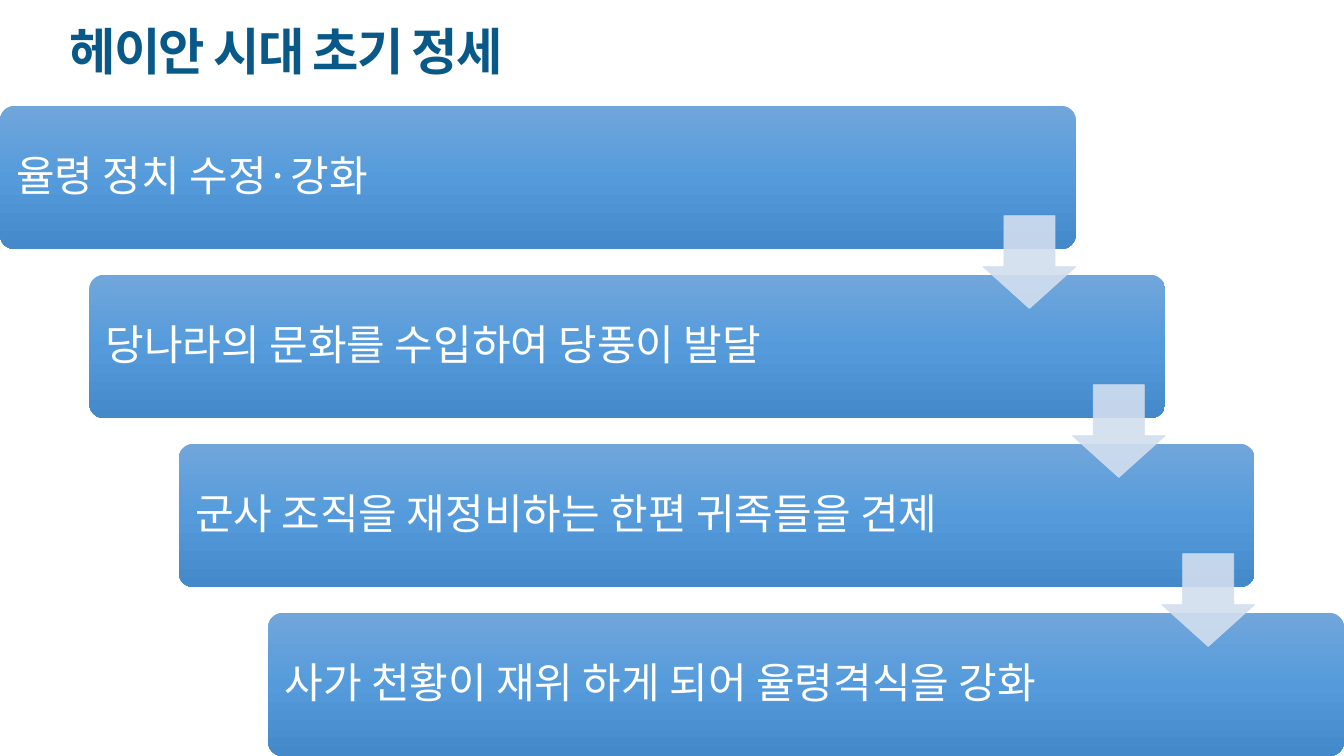
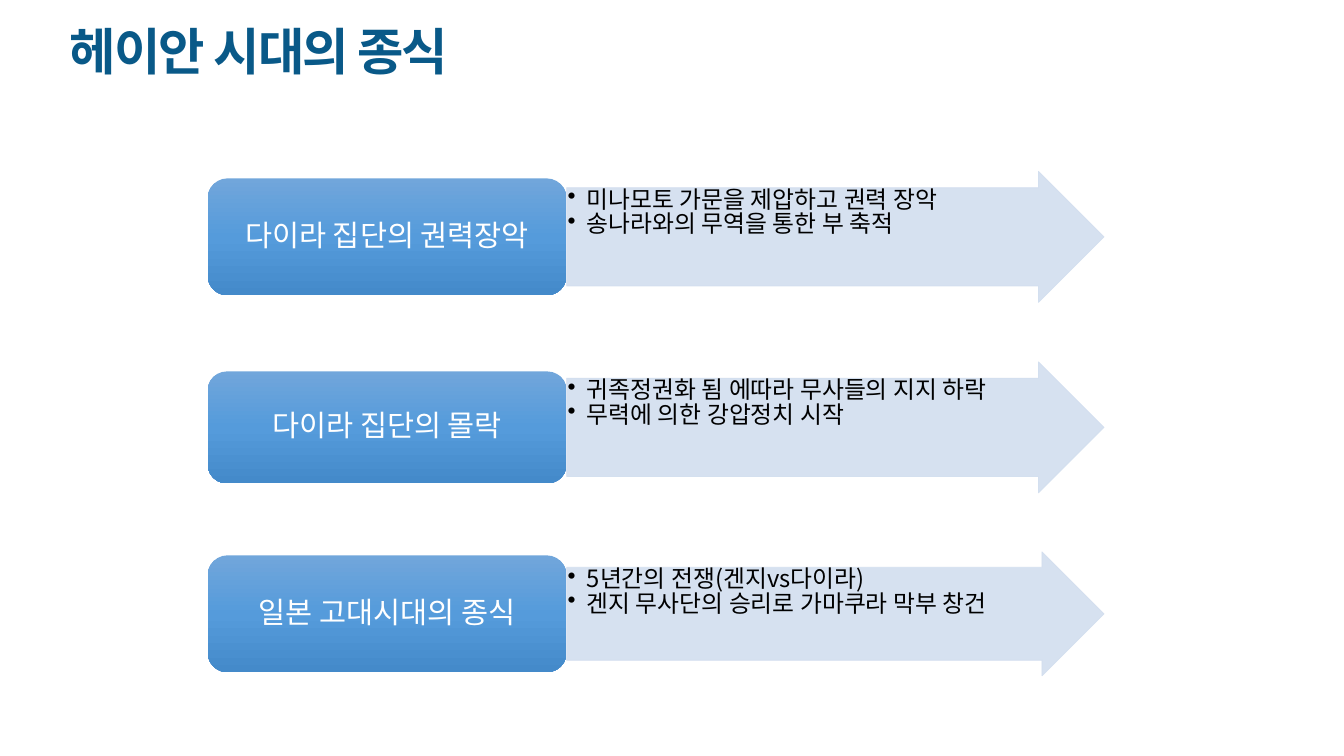
import copy

import pptx
import pptx.dml.color
import pptx.enum.shapes
import pptx.enum.text
import pptx.oxml
import pptx.oxml.ns
import pptx.util
from pptx.util import Inches

RGB = pptx.dml.color.RGBColor
SHAPE = pptx.enum.shapes.MSO_SHAPE
ALIGN = pptx.enum.text.PP_ALIGN
ANCHOR = pptx.enum.text.MSO_ANCHOR
qn = pptx.oxml.ns.qn

TITLE_BLUE = RGB(0x09, 0x59, 0x88)
WHITE = RGB(0xFF, 0xFF, 0xFF)
BLACK = RGB(0, 0, 0)
PALE_BLUE = RGB(0xD2, 0xDE, 0xEF)
BLOCK_GRADIENT = [
    (0, RGB(0x71, 0xA6, 0xDB)),
    (0.5, RGB(0x55, 0x9B, 0xDB)),
    (1, RGB(0x44, 0x8A, 0xCA)),
]
FONT = "Noto Sans CJK KR"
TITLE_FONT = {"size": pptx.util.Pt(36), "bold": True}
STEP_FONT = {"size": pptx.util.Pt(30)}
STAGE_FONT = {"size": pptx.util.Pt(21)}
DETAIL_FONT = {"size": pptx.util.Pt(17)}

EARLY_TITLE = "헤이안 시대 초기 정세"
EARLY_STEPS = [
    "율령 정치 수정·강화",
    "당나라의 문화를 수입하여 당풍이 발달",
    "군사 조직을 재정비하는 한편 귀족들을 견제",
    "사가 천황이 재위 하게 되어 율령격식을 강화",
]
END_TITLE = "헤이안 시대의 종식"
# Stage, details, then row centre, block height and arrow height in inches
END_STAGES = [
    ("다이라 집단의 권력장악",
     ["미나모토 가문을 제압하고 권력 장악", "송나라와의 무역을 통한 부 축적"],
     2.35, 1.16, 1.3),
    ("다이라 집단의 몰락",
     ["귀족정권화 됨 에따라 무사들의 지지 하락", "무력에 의한 강압정치 시작"],
     4.24, 1.11, 1.3),
    ("일본 고대시대의 종식",
     ["5년간의 전쟁(겐지vs다이라)", "겐지 무사단의 승리로 가마쿠라 막부 창건"],
     6.09, 1.16, 1.23),
]

SLIDE_WIDTH, SLIDE_HEIGHT = 13.33, 7.5
STEP_WIDTH, STEP_HEIGHT, STEP_TOP = 10.67, 1.42, 1.05
STEP_ARROW = 0.92
STAGE_LEFT, STAGE_WIDTH, DETAIL_WIDTH = 2.06, 3.56, 5.33


def write(shape, lines, color, font, margins=(0.1, 0.05), anchor=ANCHOR.MIDDLE,
          align=ALIGN.LEFT, bullets=False, line_spacing=0.9, tracking=None):
    """Fill a shape with one paragraph per line; margins are (sides, top and bottom)."""
    frame = shape.text_frame
    frame.word_wrap = True
    frame.vertical_anchor = anchor
    frame.margin_left = frame.margin_right = Inches(margins[0])
    frame.margin_top = frame.margin_bottom = Inches(margins[1])
    for index, line in enumerate(lines):
        paragraph = frame.add_paragraph() if index else frame.paragraphs[0]
        if bullets:
            properties = paragraph._p.get_or_add_pPr()
            properties.set("marL", str(Inches(0.19)))
            properties.set("indent", str(-Inches(0.19)))
            pptx.oxml.ns  # namespace helpers serve the bullet element
            properties.append(properties.makeelement(qn("a:buChar"), {"char": "•"}))
        paragraph.alignment = align
        paragraph.line_spacing = line_spacing
        run = paragraph.add_run()
        run.text = line
        run.font.name = FONT
        run.font.color.rgb = color
        for name, value in font.items():
            setattr(run.font, name, value)
        properties = run._r.get_or_add_rPr()
        properties.append(properties.makeelement(qn("a:ea"), {"typeface": FONT}))
        if tracking is not None:
            properties.set("spc", str(tracking))


def add_shape(slide, kind, left, top, width, height, adjustments):
    shape = slide.shapes.add_shape(
        kind, Inches(left), Inches(top), Inches(width), Inches(height))
    shape.shadow.inherit = False
    for index, value in enumerate(adjustments):
        shape.adjustments[index] = value
    return shape


def add_block(slide, left, top, width, height, rounding):
    block = add_shape(slide, SHAPE.ROUNDED_RECTANGLE, left, top, width, height, [rounding])
    block.line.fill.background()
    block.fill.gradient()
    block.fill.gradient_angle = 270
    stops = block._element.spPr.find(qn("a:gradFill")).find(qn("a:gsLst"))
    stops.append(copy.deepcopy(stops[0]))
    for stop, (position, color) in zip(block.fill.gradient_stops, BLOCK_GRADIENT):
        stop.position = position
        stop.color.rgb = color
    return block


def add_arrow(slide, kind, left, top, width, height, adjustments):
    arrow = add_shape(slide, kind, left, top, width, height, adjustments)
    arrow.line.width = pptx.util.Pt(0.5)
    for fill in (arrow.fill, arrow.line.fill):
        fill.solid()
        fill.fore_color.rgb = PALE_BLUE
    for color in arrow._element.spPr.iter(qn("a:srgbClr")):
        color.append(color.makeelement(qn("a:alpha"), {"val": "90000"}))
    return arrow


def add_titled_slide(deck, title):
    slide = deck.slides.add_slide(deck.slide_layouts[6])
    box = slide.shapes.add_textbox(Inches(0.59), Inches(0.13), Inches(10.36), Inches(0.82))
    write(box, [title], TITLE_BLUE, TITLE_FONT, tracking=-120)
    return slide


def build_early_slide(deck):
    slide = add_titled_slide(deck, EARLY_TITLE)
    gaps = len(EARLY_STEPS) - 1
    shift = (SLIDE_WIDTH - STEP_WIDTH) / gaps
    drop = (SLIDE_HEIGHT - STEP_HEIGHT - STEP_TOP) / gaps
    for index, step in enumerate(EARLY_STEPS):
        block = add_block(slide, index * shift, STEP_TOP + index * drop,
                          STEP_WIDTH, STEP_HEIGHT, 0.1)
        write(block, [step], WHITE, STEP_FONT, margins=(0.12, 0.12))
    for index in range(gaps):
        add_arrow(slide, SHAPE.DOWN_ARROW, index * shift + STEP_WIDTH - STEP_ARROW,
                  2.14 + index * drop, STEP_ARROW, STEP_ARROW, [0.55, 0.45])


def build_end_slide(deck):
    slide = add_titled_slide(deck, END_TITLE)
    for stage, details, centre, block_height, arrow_height in END_STAGES:
        arrow = add_arrow(slide, SHAPE.RIGHT_ARROW, STAGE_LEFT + STAGE_WIDTH,
                          centre - arrow_height / 2, DETAIL_WIDTH, arrow_height, [0.75, 0.5])
        write(arrow, details, BLACK, DETAIL_FONT, margins=(0.01, 0.01),
              anchor=ANCHOR.TOP, bullets=True, line_spacing=0.86)
        block = add_block(slide, STAGE_LEFT, centre - block_height / 2,
                          STAGE_WIDTH, block_height, 0.17)
        write(block, [stage], WHITE, STAGE_FONT, margins=(0.09, 0.04), align=ALIGN.CENTER)


def main():
    deck = pptx.Presentation()
    deck.slide_width = Inches(SLIDE_WIDTH)
    deck.slide_height = Inches(SLIDE_HEIGHT)
    build_early_slide(deck)
    build_end_slide(deck)
    deck.save("out.pptx")


if __name__ == "__main__":
    main()
